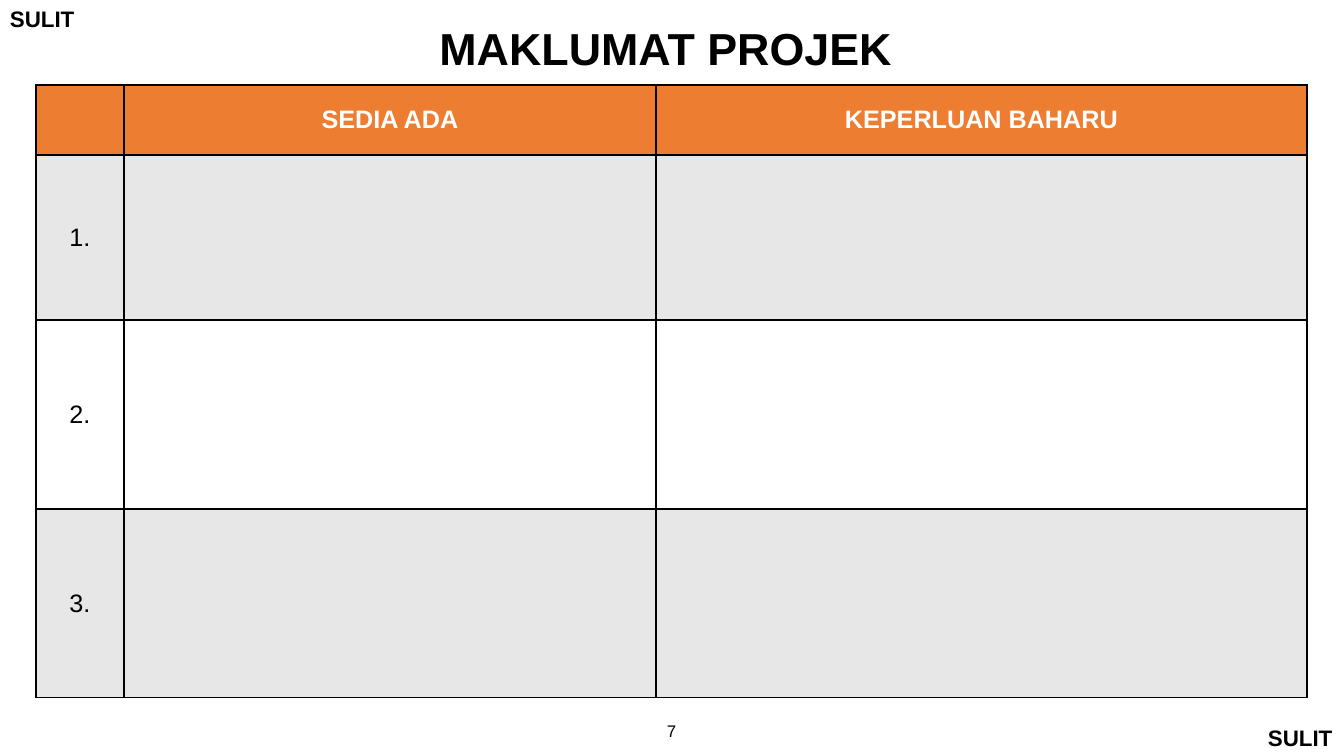
"""Build the project information slide with its comparison table."""
import lxml.etree
import pptx
import pptx.dml.color
import pptx.enum.text
import pptx.oxml.ns
import pptx.util

BLACK = pptx.dml.color.RGBColor(0x00, 0x00, 0x00)
WHITE = pptx.dml.color.RGBColor(0xFF, 0xFF, 0xFF)
ORANGE = pptx.dml.color.RGBColor(0xED, 0x7D, 0x31)
GREY = pptx.dml.color.RGBColor(0xE7, 0xE7, 0xE7)

PX_PER_INCH = 100.8
CENTER = pptx.enum.text.PP_ALIGN.CENTER
LEFT = pptx.enum.text.PP_ALIGN.LEFT
MIDDLE = pptx.enum.text.MSO_ANCHOR.MIDDLE


def px(length):
    return pptx.util.Inches(length / PX_PER_INCH)


class SlideBuilder:
    font_name = "Arial"
    border_width = pptx.util.Pt(1)

    def __init__(self, deck):
        self.page = deck.slides.add_slide(deck.slide_layouts[5])

    def add_text(self, frame, text, size, color=BLACK, bold=False, align=CENTER):
        para = frame.paragraphs[0]
        para.alignment = align
        span = para.add_run()
        span.text = text
        span.font.name = self.font_name
        span.font.size = pptx.util.Pt(size)
        span.font.bold = bold
        span.font.color.rgb = color
        return para

    def title(self, text, left, top, width, height):
        box = self.page.shapes.title
        box.left, box.top, box.width, box.height = map(px, (left, top, width, height))
        frame = box.text_frame
        frame.auto_size = pptx.enum.text.MSO_AUTO_SIZE.NONE
        frame.vertical_anchor = MIDDLE
        self.add_text(frame, text, 32, bold=True).line_spacing = 0.9

    def label(self, text, left, top, width, height, size, bold=False, align=CENTER, wrap=True):
        box = self.page.shapes.add_textbox(*map(px, (left, top, width, height)))
        box.text_frame.word_wrap = wrap
        self.add_text(box.text_frame, text, size, bold=bold, align=align)

    def border(self, cell):
        properties = cell._tc.get_or_add_tcPr()
        for side in ("a:lnL", "a:lnR", "a:lnT", "a:lnB"):
            line = lxml.etree.SubElement(
                properties, pptx.oxml.ns.qn(side), w=str(self.border_width))
            fill = lxml.etree.SubElement(line, pptx.oxml.ns.qn("a:solidFill"))
            lxml.etree.SubElement(fill, pptx.oxml.ns.qn("a:srgbClr"), val=str(BLACK))

    def table(self, rows, left, top, widths, heights):
        frame = self.page.shapes.add_table(
            len(heights), len(widths), px(left), px(top), px(sum(widths)), px(sum(heights)))
        grid = frame.table
        for column, width in zip(grid.columns, widths):
            column.width = px(width)
        for row_index, (texts, height) in enumerate(zip(rows, heights)):
            grid.rows[row_index].height = px(height)
            header = row_index == 0
            fill = ORANGE if header else (WHITE, GREY)[row_index % 2]
            for column_index, text in enumerate(texts):
                cell = grid.cell(row_index, column_index)
                self.border(cell)
                cell.fill.solid()
                cell.fill.fore_color.rgb = fill
                cell.vertical_anchor = MIDDLE
                if text:
                    self.add_text(cell.text_frame, text, 18, WHITE if header else BLACK, header)


def main():
    deck = pptx.Presentation()
    deck.slide_width, deck.slide_height = px(1344), px(756)
    builder = SlideBuilder(deck)
    for left, top in ((0, 0), (1258, 719)):
        builder.label("SULIT", left, top, 86, 37, 16, bold=True, align=LEFT, wrap=False)
    builder.title("MAKLUMAT PROJEK ", 99, 8, 1146, 85)
    rows = [("", "SEDIA ADA", "KEPERLUAN BAHARU")]
    rows += [(f"{number}.", "", "") for number in range(1, 4)]
    builder.table(rows, 36, 85, (88, 532, 651), (70, 165, 189, 189))
    builder.label("7", 645, 716, 53, 40, 12)
    deck.save("out.pptx")


if __name__ == "__main__":
    main()
